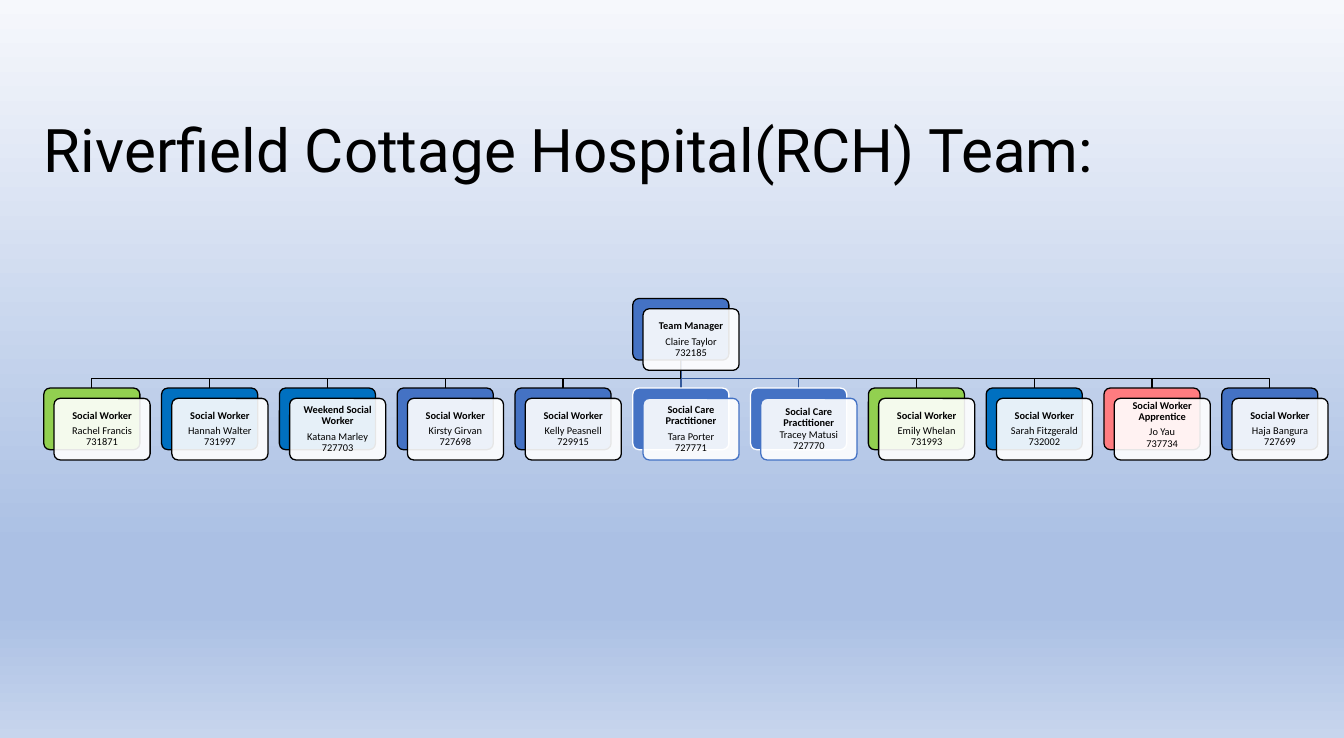
from dataclasses import dataclass

from lxml import etree
from pptx import Presentation
from pptx import util as u
from pptx.dml.color import RGBColor
from pptx.enum import shapes, text
from pptx.oxml.ns import qn

PX = u.Inches(1) // 100  # 100 px to the inch


@dataclass(frozen=True)
class Theme:
    title_font: str = "Roboto"
    card_font: str = "Calibri"
    title_size: float = 46.4
    card_size: float = 8
    card_gap: float = 3.4
    line_width: float = 1
    line_spacing: float = 0.9
    ink: str = "000000"
    white: str = "FFFFFF"
    blue: str = "4472C4"
    deep_blue: str = "0070C0"
    green: str = "92D050"
    red: str = "FF7C80"
    link_blue: str = "365B9D"
    background: tuple = ((0, "F6F8FC"), (74, "ABC0E4"), (83, "ABC0E4"), (100, "C7D5ED"))


THEME = Theme()


@dataclass(frozen=True)
class Member:
    role: str
    name: str
    phone: str
    fill: str = THEME.blue
    back_line: str = THEME.ink
    front_line: str = THEME.ink
    link: str = THEME.ink
    gap: float = THEME.card_gap
    at_top: bool = False


PRACTITIONER = dict(back_line=THEME.white, front_line=THEME.blue, link=THEME.link_blue)
MANAGER = Member("Team Manager", "Claire Taylor", "732185")
TEAM = [
    Member("Social Worker", "Rachel Francis", "731871", THEME.green),
    Member("Social Worker", "Hannah Walter", "731997", THEME.deep_blue),
    Member("Weekend Social Worker", "Katana Marley", "727703", THEME.deep_blue),
    Member("Social Worker", "Kirsty Girvan", "727698"),
    Member("Social Worker", "Kelly Peasnell", "729915"),
    Member("Social Care Practitioner", "Tara Porter", "727771", **PRACTITIONER),
    Member("Social Care Practitioner", "Tracey Matusi", "727770", gap=0, **PRACTITIONER),
    Member("Social Worker", "Emily Whelan", "731993", THEME.green),
    Member("Social Worker", "Sarah Fitzgerald", "732002", THEME.deep_blue),
    Member("Social Worker Apprentice", "Jo Yau", "737734", THEME.red, at_top=True),
    Member("Social Worker", "Haja Bangura", "727699"),
]

CARD_WIDTH, CARD_HEIGHT, CARD_OFFSET = 103, 66, 11
ROW_TOP, BUS_DROP = 96, 86  # measured from the top of the chart


def px(length):
    return u.Emu(round(length * PX))


def rgb(value):
    return RGBColor.from_string(value)


def set_line(shape, colour):
    shape.line.color.rgb = rgb(colour)
    shape.line.width = u.Pt(THEME.line_width)


def style_paragraph(paragraph, font, size, alignment, bold=False):
    paragraph.alignment = alignment
    paragraph.line_spacing = THEME.line_spacing
    paragraph.font.name = font
    paragraph.font.size = u.Pt(size)
    paragraph.font.bold = bold
    paragraph.font.color.rgb = rgb(THEME.ink)


def paint_background(slide):
    fill = slide.background.fill
    fill.gradient()
    fill.gradient_angle = 270
    stops = slide.element.find(".//" + qn("a:gsLst"))
    for stop in list(stops):
        stops.remove(stop)
    for position, colour in THEME.background:
        stop = etree.SubElement(stops, qn("a:gs"), pos=str(position * 1000))
        etree.SubElement(stop, qn("a:srgbClr"), val=colour)


def place_title(slide, left, top, width, height):
    title = slide.shapes.title
    title.left, title.top, title.width, title.height = map(px, (left, top, width, height))
    frame = title.text_frame
    frame.text = "Riverfield Cottage Hospital(RCH) Team:"
    frame.word_wrap = True
    frame.auto_size = text.MSO_AUTO_SIZE.NONE
    frame.vertical_anchor = text.MSO_ANCHOR.MIDDLE
    style_paragraph(frame.paragraphs[0], THEME.title_font, THEME.title_size, text.PP_ALIGN.LEFT)


def add_panel(group, left, top, fill, line):
    panel = group.shapes.add_shape(
        shapes.MSO_SHAPE.ROUNDED_RECTANGLE,
        px(left), px(top), px(CARD_WIDTH), px(CARD_HEIGHT))
    panel.adjustments[0] = 0.1
    panel.shadow.inherit = False
    panel.fill.solid()
    panel.fill.fore_color.rgb = rgb(fill)
    set_line(panel, line)
    return panel


def add_card(group, left, top, member):
    add_panel(group, left, top, member.fill, member.back_line)
    front = add_panel(group, left + CARD_OFFSET, top + CARD_OFFSET, THEME.white, member.front_line)
    # Let the coloured panel show faintly through the front one
    colour = front.element.spPr.find(qn("a:solidFill") + "/" + qn("a:srgbClr"))
    etree.SubElement(colour, qn("a:alpha"), val="90000")

    frame = front.text_frame
    frame.word_wrap = True
    frame.vertical_anchor = text.MSO_ANCHOR.TOP if member.at_top else text.MSO_ANCHOR.MIDDLE
    frame.margin_left = frame.margin_right = px(3)
    frame.margin_top = frame.margin_bottom = px(0 if member.at_top else 3)
    role, contact = frame.paragraphs[0], frame.add_paragraph()
    role.text = member.role
    contact.text = f"{member.name}\v{member.phone}"
    for paragraph in (role, contact):
        style_paragraph(paragraph, THEME.card_font, THEME.card_size,
                        text.PP_ALIGN.CENTER, bold=paragraph is role)
        paragraph.space_after = u.Pt(member.gap)


def add_link(group, start_x, start_y, bus_y, end_x, end_y, colour):
    if start_x == end_x:
        link = group.shapes.add_connector(
            shapes.MSO_CONNECTOR.STRAIGHT, px(start_x), px(start_y), px(end_x), px(end_y))
        etree.SubElement(link.element.spPr, qn("a:effectLst"))
    else:
        builder = group.shapes.build_freeform(px(start_x), px(start_y))
        corners = [(start_x, bus_y), (end_x, bus_y), (end_x, end_y)]
        builder.add_line_segments([(px(x), px(y)) for x, y in corners], close=False)
        link = builder.convert_to_shape()
        link.fill.background()
        link.shadow.inherit = False
    set_line(link, colour)


def place_team_chart(slide, left, top, width):
    group = slide.shapes.add_group_shape()
    pitch = (width - CARD_WIDTH - CARD_OFFSET) / (len(TEAM) - 1)
    lefts = [left + pitch * index for index in range(len(TEAM))]
    manager_left = lefts[len(TEAM) // 2]

    # Links lie behind the cards, the rightmost at the back
    for card_left, member in reversed(list(zip(lefts, TEAM))):
        add_link(group, manager_left + CARD_WIDTH / 2, top + CARD_HEIGHT, top + BUS_DROP,
                 card_left + CARD_WIDTH / 2, top + ROW_TOP, member.link)

    # Manager above, team in one row
    add_card(group, manager_left, top, MANAGER)
    for card_left, member in zip(lefts, TEAM):
        add_card(group, card_left, top + ROW_TOP, member)


def main():
    presentation = Presentation()
    presentation.slide_width, presentation.slide_height = px(1441), px(791)
    slide = presentation.slides.add_slide(presentation.slide_layouts[5])
    paint_background(slide)
    place_title(slide, 37, 87, 1243, 153)
    place_team_chart(slide, 47, 320, 1377)
    presentation.save("out.pptx")


if __name__ == "__main__":
    main()
